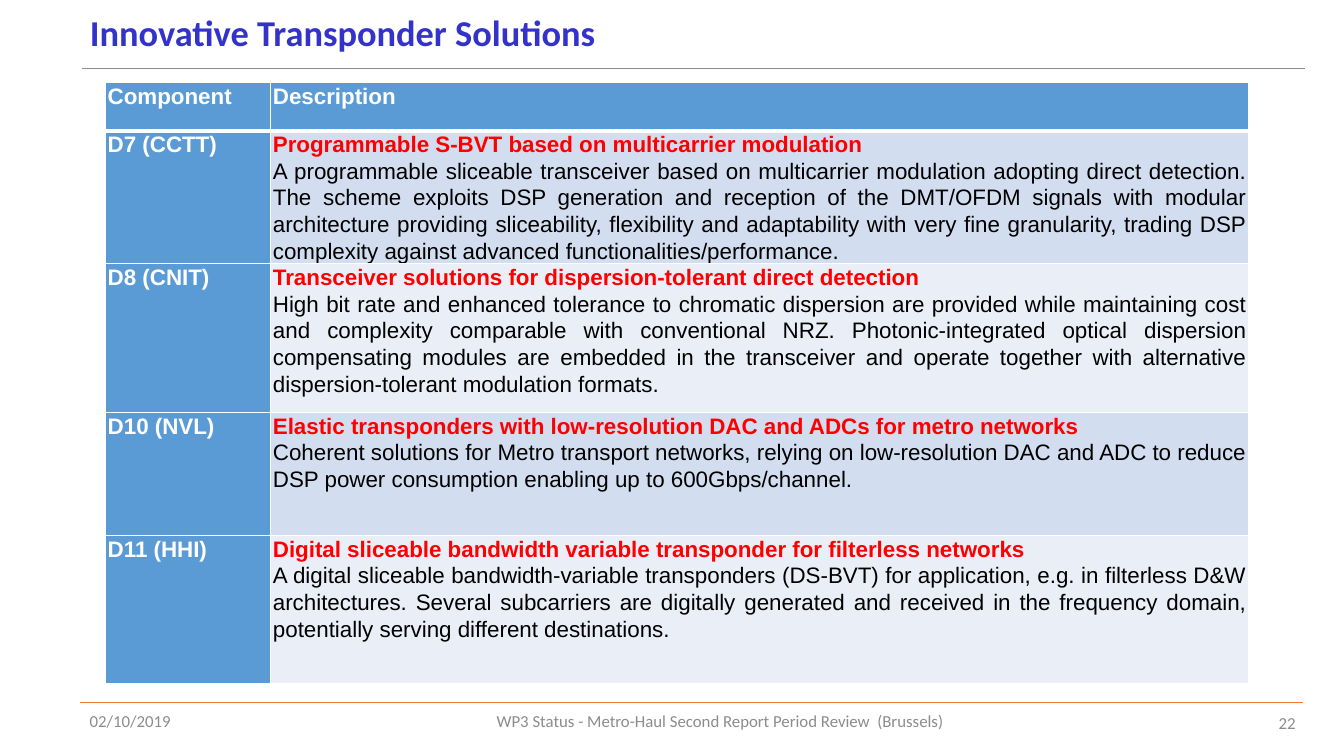
"""Build the slide on innovative transponder solutions."""
import pptx
import pptx.dml.color
import pptx.enum.shapes
import pptx.enum.text
import pptx.oxml
import pptx.oxml.ns
import pptx.util
from dataclasses import dataclass

Pt = pptx.util.Pt
Align = pptx.enum.text.PP_ALIGN
Anchor = pptx.enum.text.MSO_ANCHOR


@dataclass(frozen=True)
class Theme:
    heading: str = "3333CC"
    key: str = "FF0000"
    body: str = "000000"
    light: str = "FFFFFF"
    muted: str = "8C8C8C"
    orange: str = "ED7D31"
    blue: str = "5B9BD5"
    bands: tuple = ("D2DEEF", "EAEFF7")
    title_size: int = 26
    table_size: int = 16
    footer_size: int = 12
    slide_font: str = "Calibri"
    table_font: str = "Arial"


theme = Theme()


def rgb(value):
    return pptx.dml.color.RGBColor.from_string(value)


def write(paragraph, text, font, size, color, bold=False, align=Align.LEFT, spacing=1.0):
    paragraph.alignment = align
    paragraph.line_spacing = spacing
    run = paragraph.add_run()
    run.text = text
    run.font.name = font
    run.font.size = Pt(size)
    run.font.bold = bold
    run.font.color.rgb = rgb(color)


deck = pptx.Presentation()
deck.slide_width, deck.slide_height = Pt(960), Pt(540)
slide = deck.slides.add_slide(deck.slide_layouts[5])

for left, top, color in [(58.5, 48.5, theme.muted), (57, 501.5, theme.orange)]:
    rule = slide.shapes.add_connector(
        pptx.enum.shapes.MSO_CONNECTOR.STRAIGHT, Pt(left), Pt(top), Pt(left + 874), Pt(top))
    rule.line.color.rgb = rgb(color)
    rule.line.width = Pt(0.5)
    rule._element.spPr.append(pptx.oxml.parse_xml(
        f'<a:effectLst {pptx.oxml.ns.nsdecls("a")}/>'))

heading = slide.shapes.title
heading.left, heading.top, heading.width, heading.height = Pt(57), Pt(0), Pt(790), Pt(49)
heading.text_frame.vertical_anchor = Anchor.MIDDLE
heading.text_frame.auto_size = pptx.enum.text.MSO_AUTO_SIZE.NONE
write(heading.text_frame.paragraphs[0], "Innovative Transponder Solutions",
      theme.slide_font, theme.title_size, theme.heading, True, spacing=0.9)

components = [
    ("Component", "Description", ""),
    ("D7 (CCTT)", "Programmable S-BVT based on multicarrier modulation",
     "A programmable sliceable transceiver based on multicarrier modulation adopting direct "
     "detection. The scheme exploits DSP generation and reception of the DMT/OFDM signals with "
     "modular architecture providing sliceability, flexibility and adaptability with very fine "
     "granularity, trading DSP complexity against advanced functionalities/performance."),
    ("D8 (CNIT)", "Transceiver solutions for dispersion-tolerant direct detection",
     "High bit rate and enhanced tolerance to chromatic dispersion are provided while "
     "maintaining cost and complexity comparable with conventional NRZ. Photonic-integrated "
     "optical dispersion compensating modules are embedded in the transceiver and operate "
     "together with alternative dispersion-tolerant modulation formats."),
    ("D10 (NVL)", "Elastic transponders with low-resolution DAC and ADCs for metro networks",
     "Coherent solutions for Metro transport networks, relying on low-resolution DAC and ADC to "
     "reduce DSP power consumption enabling up to 600Gbps/channel."),
    ("D11 (HHI)", "Digital sliceable bandwidth variable transponder for filterless networks",
     "A digital sliceable bandwidth-variable transponders (DS-BVT) for application, e.g. in "
     "filterless D&W architectures. Several subcarriers are digitally generated and received in "
     "the frequency domain, potentially serving different destinations."),
]
row_heights = [34.5, 95, 106, 88, 106]
solutions = slide.shapes.add_table(
    len(components), 2, Pt(75.5), Pt(59), Pt(816.5), Pt(sum(row_heights))).table
solutions.columns[0].width, solutions.columns[1].width = Pt(118), Pt(698.5)

for index, (component, summary, detail) in enumerate(components):
    solutions.rows[index].height = Pt(row_heights[index])
    band = theme.bands[(index - 1) % 2] if index else theme.blue
    summary_color = theme.key if index else theme.light
    entries = [
        (theme.blue, [(component, theme.light, True)]),
        (band, [(summary, summary_color, True), (detail, theme.body, False)]),
    ]
    for cell, (fill, lines) in zip(solutions.rows[index].cells, entries):
        cell.margin_left = cell.margin_right = Pt(1.5)
        cell.margin_top = cell.margin_bottom = Pt(0)
        cell.vertical_anchor = Anchor.TOP
        for side in "LRTB":
            under_header = (index, side) in [(0, "B"), (1, "T")]
            cell._tc.get_or_add_tcPr().append(pptx.oxml.parse_xml(
                f'<a:ln{side} {pptx.oxml.ns.nsdecls("a")} w="{Pt(3 if under_header else 1)}">'
                f'<a:solidFill><a:srgbClr val="{theme.light}"/></a:solidFill></a:ln{side}>'))
        cell.fill.solid()
        cell.fill.fore_color.rgb = rgb(fill)
        for position, (text, color, bold) in enumerate(lines):
            if text:
                frame = cell.text_frame
                paragraph = frame.add_paragraph() if position else frame.paragraphs[0]
                write(paragraph, text, theme.table_font, theme.table_size, color, bold,
                      Align.JUSTIFY, 1.07)

footers = [
    ("02/10/2019", 57, 500.5, 80.5, Align.LEFT),
    ("WP3 Status - Metro-Haul Second Report Period Review  (Brussels)",
     137.5, 500.5, 754, Align.CENTER),
    ("22", 899, 502, 33.5, Align.RIGHT),
]
for text, left, top, width, align in footers:
    footer = slide.shapes.add_textbox(Pt(left), Pt(top), Pt(width), Pt(29)).text_frame
    footer.word_wrap = True
    footer.vertical_anchor = Anchor.MIDDLE
    write(footer.paragraphs[0], text, theme.slide_font, theme.footer_size, theme.muted,
          align=align)

deck.save("out.pptx")
